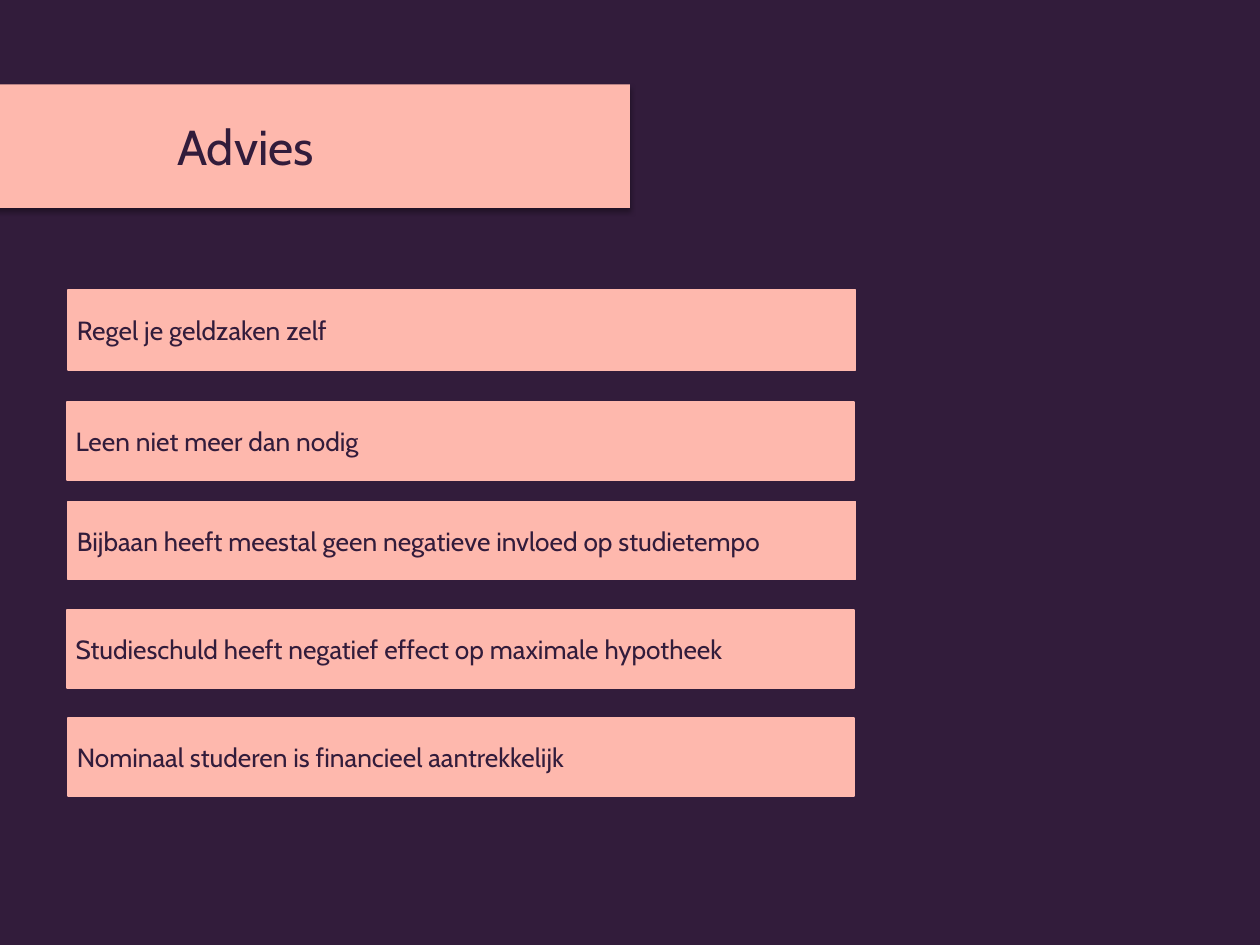
import pptx
import pptx.dml.color
import pptx.enum.shapes
import pptx.enum.text
import pptx.oxml
import pptx.oxml.ns
import pptx.util
from pptx.util import Inches

COLORS = {"plum": "321C3B", "peach": "FEB8AD", "black": "000000"}
ALIGN = pptx.enum.text.PP_ALIGN


class Deck:
    """Hold the style and the current slide, and draw each kind of element."""

    font = "Cabin"

    def __init__(self, wide, high):
        self.show = pptx.Presentation()
        self.show.slide_width = Inches(wide)
        self.show.slide_height = Inches(high)
        self.slide = self.show.slides.add_slide(self.show.slide_layouts[5])
        self.paint(self.slide.background.fill, "plum")

    def paint(self, fill, name):
        fill.solid()
        fill.fore_color.rgb = pptx.dml.color.RGBColor.from_string(COLORS[name])

    def label(self, shape, text, size, align):
        frame = shape.text_frame
        frame.text = text
        frame.word_wrap = True
        frame.auto_size = pptx.enum.text.MSO_AUTO_SIZE.NONE
        frame.vertical_anchor = pptx.enum.text.MSO_ANCHOR.MIDDLE
        line = frame.paragraphs[0]
        line.alignment = align
        line.font.name = self.font
        line.font.size = pptx.util.Pt(size)
        self.paint(line.font.fill, "plum")

    def shade(self, shape, blur, dist, angle, alpha):
        shape.shadow.inherit = False
        effects = shape._element.spPr.find(pptx.oxml.ns.qn("a:effectLst"))
        effects.append(pptx.oxml.parse_xml(
            f'<a:outerShdw {pptx.oxml.ns.nsdecls("a")} '
            f'blurRad="{pptx.util.Pt(blur)}" dist="{pptx.util.Pt(dist)}" '
            f'dir="{angle * 60000}" rotWithShape="0">'
            f'<a:srgbClr val="{COLORS["black"]}">'
            f'<a:alpha val="{alpha * 1000}"/></a:srgbClr></a:outerShdw>'))

    def title(self, text, left, top, wide, high):
        shape = self.slide.shapes.title
        shape.left, shape.top = Inches(left), Inches(top)
        shape.width, shape.height = Inches(wide), Inches(high)
        self.paint(shape.fill, "peach")
        self.label(shape, text, 28, ALIGN.CENTER)
        self.shade(shape, 3.1, 1.8, 90, 35)

    def bar(self, text, left, top, wide, high):
        shape = self.slide.shapes.add_shape(
            pptx.enum.shapes.MSO_SHAPE.RECTANGLE,
            Inches(left), Inches(top), Inches(wide), Inches(high))
        shape.shadow.inherit = False
        self.paint(shape.fill, "peach")
        self.paint(shape.line.fill, "peach")
        shape.line.width = pptx.util.Pt(1)
        self.label(shape, text, 15, ALIGN.LEFT)
        frame = shape.text_frame
        frame.margin_left = frame.margin_right = Inches(0.07)
        frame.margin_top = frame.margin_bottom = 0


def main():
    deck = Deck(10, 7.5)
    deck.title("Advies", -1.1, 0.67, 6.1, 0.98)
    tips = [
        ("Regel je geldzaken zelf", 0.54, 2.3, 6.25, 0.64),
        ("Leen niet meer dan nodig", 0.53, 3.19, 6.25, 0.62),
        ("Bijbaan heeft meestal geen negatieve invloed op studietempo",
         0.54, 3.98, 6.25, 0.62),
        ("Studieschuld heeft negatief effect op maximale hypotheek",
         0.53, 4.84, 6.25, 0.62),
        ("Nominaal studeren is financieel aantrekkelijk",
         0.54, 5.7, 6.24, 0.62),
    ]
    for tip in tips:
        deck.bar(*tip)
    deck.show.save("out.pptx")


if __name__ == "__main__":
    main()
